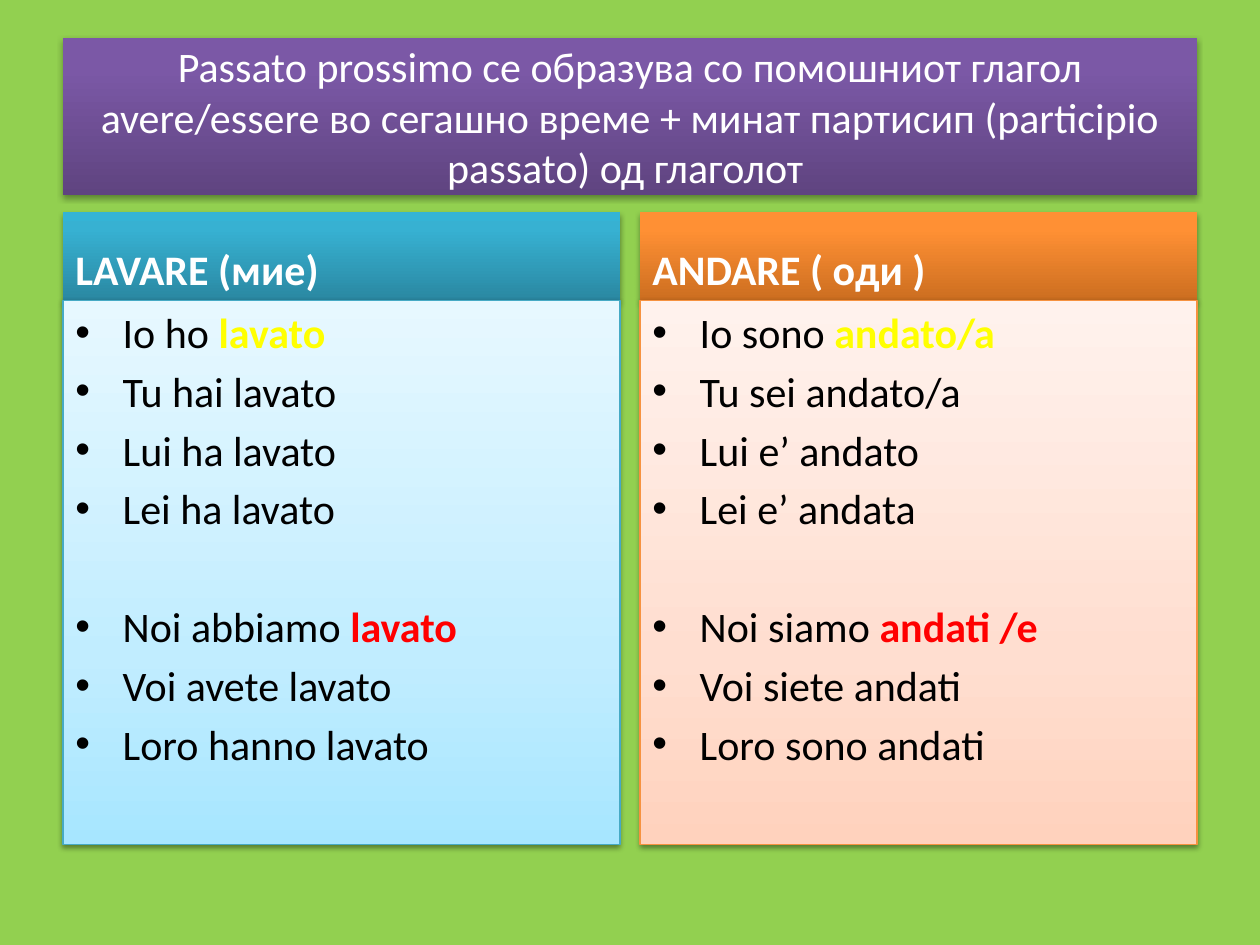
from lxml.etree import SubElement
from pptx import Presentation
from pptx.dml.color import RGBColor
from pptx.enum.shapes import MSO_SHAPE
from pptx.enum.text import MSO_ANCHOR, PP_ALIGN
from pptx.oxml.ns import qn
from pptx.util import Emu, Inches, Pt

COLORS = {
    "page": "92D050", "white": "FFFFFF", "black": "000000",
    "singular": "FFFF00", "plural": "FF0000",
    "lavare line": "46AAC5", "andare line": "F69240",
}
# Gradient stops (percent, colour), running from the bottom edge upwards
GRADIENTS = {
    "title": [(0, "5F4480"), (80, "7B58A6"), (100, "7C57A8")],
    "lavare head": [(0, "2A88A2"), (80, "37B1D2"), (100, "34B4D6")],
    "lavare body": [(0, "A7E6FF"), (35, "C1EDFF"), (100, "E7F8FF")],
    "andare head": [(0, "CC6E20"), (80, "FF9034"), (100, "FF9136")],
    "andare body": [(0, "FFD2BD"), (35, "FFDED0"), (100, "FFF2ED")],
}
FONT, SIZE = "Calibri", 24
SPACE = 0.2 * SIZE          # ordinary space before a paragraph
GROUP_SPACE = 38.5          # space that sets the plural forms apart
INDENT = Inches(0.375)

TITLE = ("Passato prossimo се образува со помошниот глагол avere/essere "
         "во сегашно време + минат партисип (participio passato) од глаголот ")
# Each form is (plain text, emphasised participle); groups: singular, plural
VERBS = {
    "lavare": ("LAVARE (мие)", {
        "singular": [("Io ho ", "lavato"), ("Tu hai lavato", ""),
                     ("Lui ha lavato", ""), ("Lei ha lavato", "")],
        "plural": [("Noi abbiamo ", "lavato"), ("Voi avete lavato", ""),
                   ("Loro hanno lavato", "")],
    }),
    "andare": ("ANDARE ( оди )", {
        "singular": [("Io sono ", "andato/a"), ("Tu sei andato/a", ""),
                     ("Lui e’ andato", ""), ("Lei e’ andata", "")],
        "plural": [("Noi siamo ", "andati /e"), ("Voi siete andati", ""),
                   ("Loro sono andati", "")],
    }),
}


def add_span(para, text, color="black", bold=False):
    span = para.add_run()
    span.text = text
    span.font.name, span.font.size, span.font.bold = FONT, Pt(SIZE), bold
    span.font.color.rgb = RGBColor.from_string(COLORS[color])


def add_bullet(para):
    properties = para._p.get_or_add_pPr()
    properties.set("marL", str(INDENT))
    properties.set("indent", str(-INDENT))
    SubElement(properties, qn("a:buFont"), typeface="Arial")
    SubElement(properties, qn("a:buChar"), char="•")


def add_color(parent, color):
    return SubElement(parent, qn("a:srgbClr"), val=color)


def add_panel(page, box, gradient, anchor, line=None, opacity=35, distance=1.8):
    """Add a gradient rectangle with a soft shadow; return its text frame."""
    panel = page.shapes.add_shape(MSO_SHAPE.RECTANGLE, *(Emu(round(n)) for n in box))
    panel.fill.gradient()
    panel.fill.gradient_angle = 90
    stops = panel._element.spPr.find(".//" + qn("a:gsLst"))
    for stop in list(stops):
        stops.remove(stop)
    for percent, color in GRADIENTS[gradient]:
        add_color(SubElement(stops, qn("a:gs"), pos=str(percent * 1000)), color)
    if line:
        panel.line.color.rgb = RGBColor.from_string(COLORS[line])
        panel.line.width = Pt(0.75)
    else:
        panel.line.fill.background()
    # Shadow falling straight down
    panel.shadow.inherit = False
    shadow = SubElement(
        panel._element.spPr.find(qn("a:effectLst")), qn("a:outerShdw"),
        blurRad=str(Pt(3.1)), dist=str(Pt(distance)), dir="5400000", rotWithShape="0")
    SubElement(add_color(shadow, COLORS["black"]), qn("a:alpha"), val=str(opacity * 1000))
    frame = panel.text_frame
    frame.word_wrap, frame.vertical_anchor = True, anchor
    frame.paragraphs[0].alignment = PP_ALIGN.LEFT
    return frame


def add_title(page, box):
    para = add_panel(page, box, "title", MSO_ANCHOR.MIDDLE).paragraphs[0]
    para.alignment = PP_ALIGN.CENTER
    add_span(para, TITLE, color="white")


def add_verb(page, box, verb, head_share):
    """Heading over the conjugation list, together filling the box."""
    left, top, width, height = box
    head_height = height * head_share
    heading, groups = VERBS[verb]
    # Heading
    head = add_panel(page, (left, top, width, head_height), f"{verb} head", MSO_ANCHOR.BOTTOM)
    head.paragraphs[0].space_before = Pt(SPACE)
    add_span(head.paragraphs[0], heading, color="white", bold=True)
    # Conjugation
    body = add_panel(page, (left, top + head_height, width, height - head_height),
                     f"{verb} body", MSO_ANCHOR.TOP, line=f"{verb} line",
                     opacity=38, distance=1.6)
    para = body.paragraphs[0]
    for group, forms in groups.items():
        for number, (text, participle) in enumerate(forms):
            if para.runs:
                para = body.add_paragraph()
            para.alignment = PP_ALIGN.LEFT
            starts_plural = group == "plural" and number == 0
            para.space_before = Pt(GROUP_SPACE if starts_plural else SPACE)
            add_bullet(para)
            add_span(para, text)
            if participle:
                add_span(para, participle, color=group, bold=True)


def main():
    deck = Presentation()
    deck.slide_width, deck.slide_height = Inches(10), Inches(7.5)
    wide, high = deck.slide_width, deck.slide_height
    page = deck.slides.add_slide(deck.slide_layouts[6])
    page.background.fill.solid()
    page.background.fill.fore_color.rgb = RGBColor.from_string(COLORS["page"])

    margin, gap = 0.05 * wide, 0.016 * wide
    content = wide - 2 * margin
    add_title(page, (margin, 0.04 * high, content, high / 6))
    column = (content - gap) / len(VERBS)
    for index, verb in enumerate(VERBS):
        left = margin + index * (column + gap)
        add_verb(page, (left, 0.224 * high, column, 0.67 * high), verb, head_share=0.14)

    deck.save("out.pptx")


if __name__ == "__main__":
    main()
